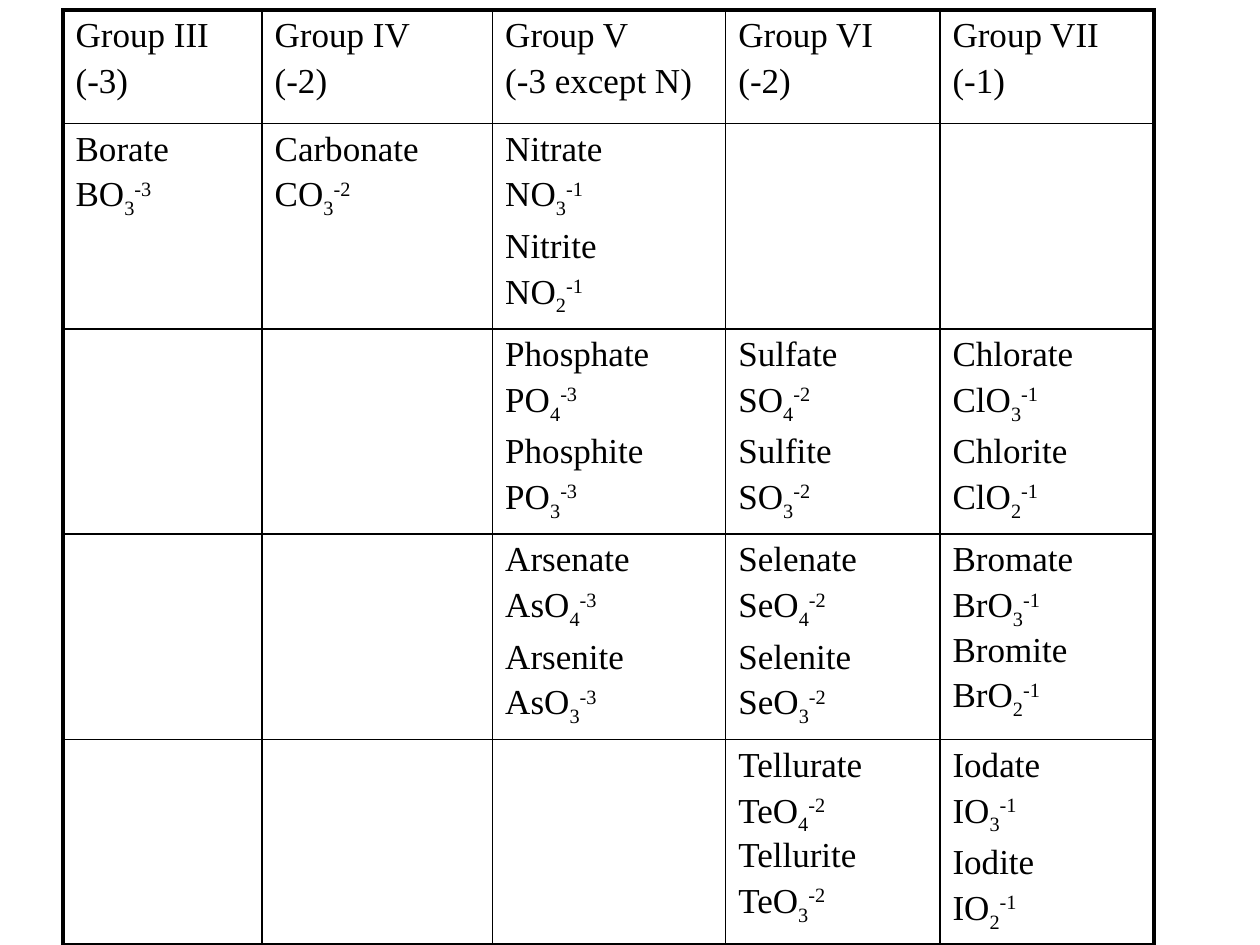
from dataclasses import dataclass

from lxml import etree
from pptx import Presentation
from pptx.dml.color import RGBColor
from pptx.oxml.ns import qn
from pptx.util import Inches, Pt

BLANK_LAYOUT = 6
SUBSCRIPT = -25
SUPERSCRIPT = 30

COLUMN_WIDTHS = [1.58, 1.83, 1.85, 1.7, 1.7]
ROW_HEIGHTS = [0.9] + [1.63] * 4

GROUPS = [
    ("Group III", "(-3)"),
    ("Group IV", "(-2)"),
    ("Group V", "(-3 except N)"),
    ("Group VI", "(-2)"),
    ("Group VII", "(-1)"),
]

IONS = [
    [
        [("Borate", "BO", "3", "-3")],
        [("Carbonate", "CO", "3", "-2")],
        [("Nitrate", "NO", "3", "-1"), ("Nitrite", "NO", "2", "-1")],
        [],
        [],
    ],
    [
        [],
        [],
        [("Phosphate", "PO", "4", "-3"), ("Phosphite", "PO", "3", "-3")],
        [("Sulfate", "SO", "4", "-2"), ("Sulfite", "SO", "3", "-2")],
        [("Chlorate", "ClO", "3", "-1"), ("Chlorite", "ClO", "2", "-1")],
    ],
    [
        [],
        [],
        [("Arsenate", "AsO", "4", "-3"), ("Arsenite", "AsO", "3", "-3")],
        [("Selenate", "SeO", "4", "-2"), ("Selenite", "SeO", "3", "-2")],
        [("Bromate", "BrO", "3", "-1"), ("Bromite", "BrO", "2", "-1")],
    ],
    [
        [],
        [],
        [],
        [("Tellurate", "TeO", "4", "-2"), ("Tellurite", "TeO", "3", "-2")],
        [("Iodate", "IO", "3", "-1"), ("Iodite", "IO", "2", "-1")],
    ],
]

NAMES_AFTER_LINE_BREAK = {"Bromite", "Tellurite"}


@dataclass(frozen=True)
class Theme:
    font: str = "Times New Roman"
    size: int = 20
    ink: str = "000000"
    space_before_percent: int = 20
    inner_line: float = 1
    outer_line: float = 2.25


class SlideBuilder:
    def __init__(self, slide, theme):
        self.slide = slide
        self.theme = theme

    def table(self, left, top, column_widths, row_heights):
        frame = self.slide.shapes.add_table(
            len(row_heights), len(column_widths), Inches(left), Inches(top),
            Inches(sum(column_widths)), Inches(sum(row_heights)),
        )
        table = frame.table
        table.first_row = False
        table.horz_banding = False
        for column, width in zip(table.columns, column_widths):
            column.width = Inches(width)
        for row, height in zip(table.rows, row_heights):
            row.height = Inches(height)
        last_row, last_column = len(row_heights) - 1, len(column_widths) - 1
        for row in range(last_row + 1):
            for column in range(last_column + 1):
                cell = table.cell(row, column)
                self.borders(cell, {
                    "a:lnL": column == 0,
                    "a:lnR": column == last_column,
                    "a:lnT": row == 0,
                    "a:lnB": row == last_row,
                })
                cell.fill.background()
        return table

    def borders(self, cell, edges):
        properties = cell._tc.get_or_add_tcPr()
        for tag, is_outer in edges.items():
            width = self.theme.outer_line if is_outer else self.theme.inner_line
            line = etree.SubElement(properties, qn(tag), w=str(Pt(width)))
            fill = etree.SubElement(line, qn("a:solidFill"))
            etree.SubElement(fill, qn("a:srgbClr"), val=self.theme.ink)

    def paragraph(self, cell, text):
        paragraph = cell.text_frame.paragraphs[0]
        if paragraph.runs:
            paragraph = cell.text_frame.add_paragraph()
        paragraph.font.name = self.theme.font
        paragraph.font.size = Pt(self.theme.size)
        paragraph.font.color.rgb = RGBColor.from_string(self.theme.ink)
        spacing = etree.Element(qn("a:spcBef"))
        percent = str(self.theme.space_before_percent * 1000)
        etree.SubElement(spacing, qn("a:spcPct"), val=percent)
        paragraph._p.get_or_add_pPr().insert(0, spacing)
        self.run(paragraph, text)
        return paragraph

    def run(self, paragraph, text, baseline=0):
        run = paragraph.add_run()
        run.text = text
        if baseline:
            run.font._element.set("baseline", str(baseline * 1000))

    def ions(self, cell, ions):
        for name, elements, count, charge in ions:
            if name in NAMES_AFTER_LINE_BREAK:
                formula.add_line_break()
                self.run(formula, name)
            else:
                self.paragraph(cell, name)
            formula = self.paragraph(cell, elements)
            self.run(formula, count, SUBSCRIPT)
            self.run(formula, charge, SUPERSCRIPT)


def main():
    presentation = Presentation()
    presentation.slide_width = Inches(10)
    presentation.slide_height = Inches(7.5)
    slide = presentation.slides.add_slide(presentation.slide_layouts[BLANK_LAYOUT])
    builder = SlideBuilder(slide, Theme())

    table = builder.table(0.5, 0.08, COLUMN_WIDTHS, ROW_HEIGHTS)
    for column, lines in enumerate(GROUPS):
        for line in lines:
            builder.paragraph(table.cell(0, column), line)
    for row, ion_row in enumerate(IONS, start=1):
        for column, ions in enumerate(ion_row):
            builder.ions(table.cell(row, column), ions)

    presentation.save("out.pptx")


if __name__ == "__main__":
    main()
